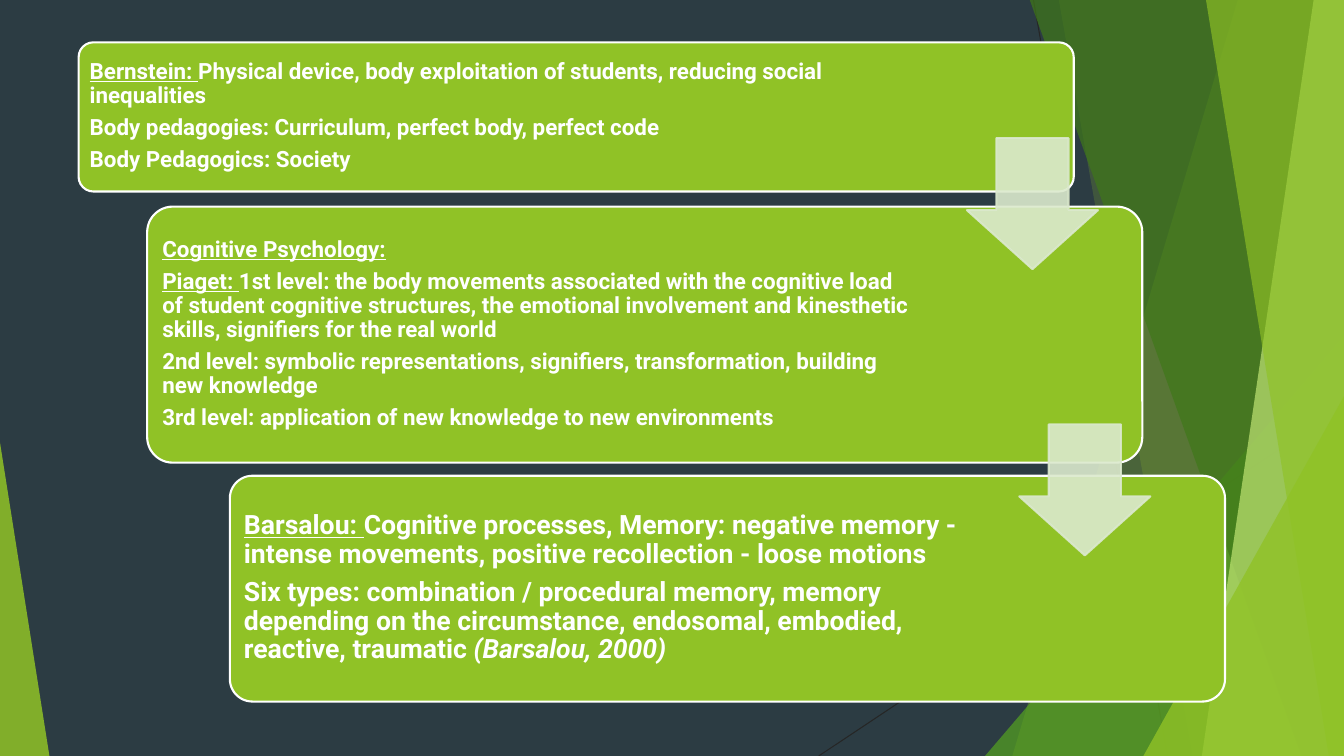
"""Build the slide of three stepped theory cards linked by down arrows."""
from dataclasses import dataclass

import lxml.etree
import pptx
import pptx.dml.color
import pptx.enum.shapes
import pptx.enum.text
import pptx.oxml.ns
import pptx.util

PX = 9144
WIDTH, HEIGHT = 1333, 750
SHAPES = pptx.enum.shapes.MSO_SHAPE


@dataclass(frozen=True)
class Theme:
    background: str = "2C3C43"
    accent: str = "90C226"
    leaf: str = "54A021"
    forest: str = "3F7819"
    lime: str = "C0E474"
    arrow: str = "DBE9CD"
    hairline: str = "262626"
    white: str = "FFFFFF"
    font: str = "Roboto"
    body: int = 16
    large: int = 19
    outline: float = 1.5
    thin: float = 0.75
    line_spacing: float = 0.9
    gap: float = 0.35


THEME = Theme()


@dataclass(frozen=True)
class Box:
    left: int
    top: int
    width: int
    height: int


@dataclass(frozen=True)
class Facet:
    top_x: int
    bottom_x: int
    color: str
    alpha: int


@dataclass(frozen=True)
class Wedge:
    box: Box
    apex: int
    color: str
    alpha: int


@dataclass(frozen=True)
class Span:
    text: str
    underline: bool = False
    italic: bool = False


@dataclass(frozen=True)
class Card:
    frame: Box
    text: Box
    inset: int
    size: int
    paras: tuple[tuple[Span, ...], ...]


HAIRLINES = ((1025, 0, 1158, HEIGHT), (WIDTH, 403, 812, HEIGHT))

BACKDROP = (
    Facet(1228, 1004, THEME.accent, 30),
    Facet(1050, 1183, THEME.accent, 20),
    Wedge(Box(977, 333, 356, 417), 1, THEME.leaf, 72),
    Facet(1021, 1291, THEME.forest, 70),
    Facet(1303, 1192, THEME.lime, 70),
    Facet(1196, 1318, THEME.accent, 65),
    Wedge(Box(1134, 393, 199, 357), 1, THEME.accent, 80),
    Wedge(Box(0, 439, 49, 311), 0, THEME.accent, 85),
)

CARDS = (
    Card(Box(78, 42, 987, 148), Box(82, 46, 774, 139), 7, THEME.body, (
        (Span("Bernstein: ", underline=True),
         Span("Physical device, body exploitation of students, reducing social inequalities")),
        (Span("Body pedagogies: Curriculum, perfect body, perfect code"),),
        (Span("Body Pedagogics: Society"),),
    )),
    Card(Box(146, 205, 987, 254), Box(154, 212, 755, 239), 7, THEME.body, (
        (Span("Cognitive Psychology:", underline=True),),
        (Span("Piaget: ", underline=True),
         Span("1st level: the body movements associated with the cognitive load of student "
              "cognitive structures, the emotional involvement and kinesthetic skills, "
              "signifiers for the real world")),
        (Span("2nd level: symbolic representations, signifiers, transformation, "
              "building new knowledge"),),
        (Span("3rd level: application of new knowledge to new environments"),),
    )),
    Card(Box(228, 472, 987, 224), Box(234, 478, 757, 211), 8, THEME.large, (
        (Span("Barsalou: ", underline=True),
         Span("Cognitive processes, Memory: negative memory - intense movements, "
              "positive recollection - loose motions")),
        (Span("Six types: combination / procedural memory, memory depending on the "
              "circumstance, endosomal, embodied, reactive, traumatic "),
         Span("(Barsalou, 2000)", italic=True)),
    )),
)

ARROWS = (Box(959, 137, 130, 130), Box(1011, 421, 130, 130))


def rgb(color: str) -> pptx.dml.color.RGBColor:
    return pptx.dml.color.RGBColor.from_string(color)


def emu(box: Box) -> tuple[int, ...]:
    return tuple(side * PX for side in (box.left, box.top, box.width, box.height))


def paint(shape, color: str, alpha: int = 100, line: str | None = None) -> None:
    shape.shadow.inherit = False
    shape.fill.solid()
    shape.fill.fore_color.rgb = rgb(color)
    if line:
        shape.line.color.rgb = rgb(line)
        shape.line.width = pptx.util.Pt(THEME.outline)
    else:
        shape.line.fill.background()
    if alpha < 100:
        for tone in shape.element.spPr.iter(pptx.oxml.ns.qn("a:srgbClr")):
            lxml.etree.SubElement(tone, pptx.oxml.ns.qn("a:alpha"), val=str(alpha * 1000))


def add_hairline(slide, ends: tuple[int, int, int, int]) -> None:
    line = slide.shapes.add_connector(
        pptx.enum.shapes.MSO_CONNECTOR.STRAIGHT, *(end * PX for end in ends))
    line.line.color.rgb = rgb(THEME.hairline)
    line.line.width = pptx.util.Pt(THEME.thin)
    lxml.etree.SubElement(line.element.spPr, pptx.oxml.ns.qn("a:effectLst"))


def add_facet(slide, facet: Facet) -> None:
    outline = slide.shapes.build_freeform(facet.top_x, -1, scale=PX)
    outline.add_line_segments(
        [(WIDTH, -1), (WIDTH, HEIGHT), (facet.bottom_x, HEIGHT)], close=True)
    paint(outline.convert_to_shape(), facet.color, facet.alpha)


def add_wedge(slide, wedge: Wedge) -> None:
    shape = slide.shapes.add_shape(SHAPES.ISOSCELES_TRIANGLE, *emu(wedge.box))
    shape.adjustments[0] = wedge.apex
    paint(shape, wedge.color, wedge.alpha)


def add_card(slide, card: Card) -> None:
    frame = slide.shapes.add_shape(SHAPES.ROUNDED_RECTANGLE, *emu(card.frame))
    frame.adjustments[0] = 0.1
    paint(frame, THEME.accent, line=THEME.white)

    text = slide.shapes.add_textbox(*emu(card.text)).text_frame
    text.word_wrap = True
    text.vertical_anchor = pptx.enum.text.MSO_ANCHOR.MIDDLE
    text.margin_left = text.margin_right = card.inset * PX
    text.margin_top = text.margin_bottom = card.inset * PX
    for index, spans in enumerate(card.paras):
        para = text.add_paragraph() if index else text.paragraphs[0]
        para.line_spacing = THEME.line_spacing
        para.space_after = pptx.util.Pt(card.size * THEME.gap)
        for span in spans:
            run = para.add_run()
            run.text = span.text
            run.font.name = THEME.font
            run.font.size = pptx.util.Pt(card.size)
            run.font.bold = True
            run.font.underline = span.underline
            run.font.italic = span.italic
            run.font.color.rgb = rgb(THEME.white)


def add_arrow(slide, box: Box) -> None:
    arrow = slide.shapes.add_shape(SHAPES.DOWN_ARROW, *emu(box))
    arrow.adjustments[0] = 0.55
    arrow.adjustments[1] = 0.45
    paint(arrow, THEME.arrow, 90, THEME.arrow)


def main() -> None:
    deck = pptx.Presentation()
    deck.slide_width, deck.slide_height = WIDTH * PX, HEIGHT * PX
    slide = deck.slides.add_slide(deck.slide_layouts.get_by_name("Blank"))
    slide.background.fill.solid()
    slide.background.fill.fore_color.rgb = rgb(THEME.background)
    for ends in HAIRLINES:
        add_hairline(slide, ends)
    for piece in BACKDROP:
        if isinstance(piece, Facet):
            add_facet(slide, piece)
        else:
            add_wedge(slide, piece)
    for card in CARDS:
        add_card(slide, card)
    for box in ARROWS:
        add_arrow(slide, box)
    deck.save("out.pptx")


if __name__ == "__main__":
    main()
